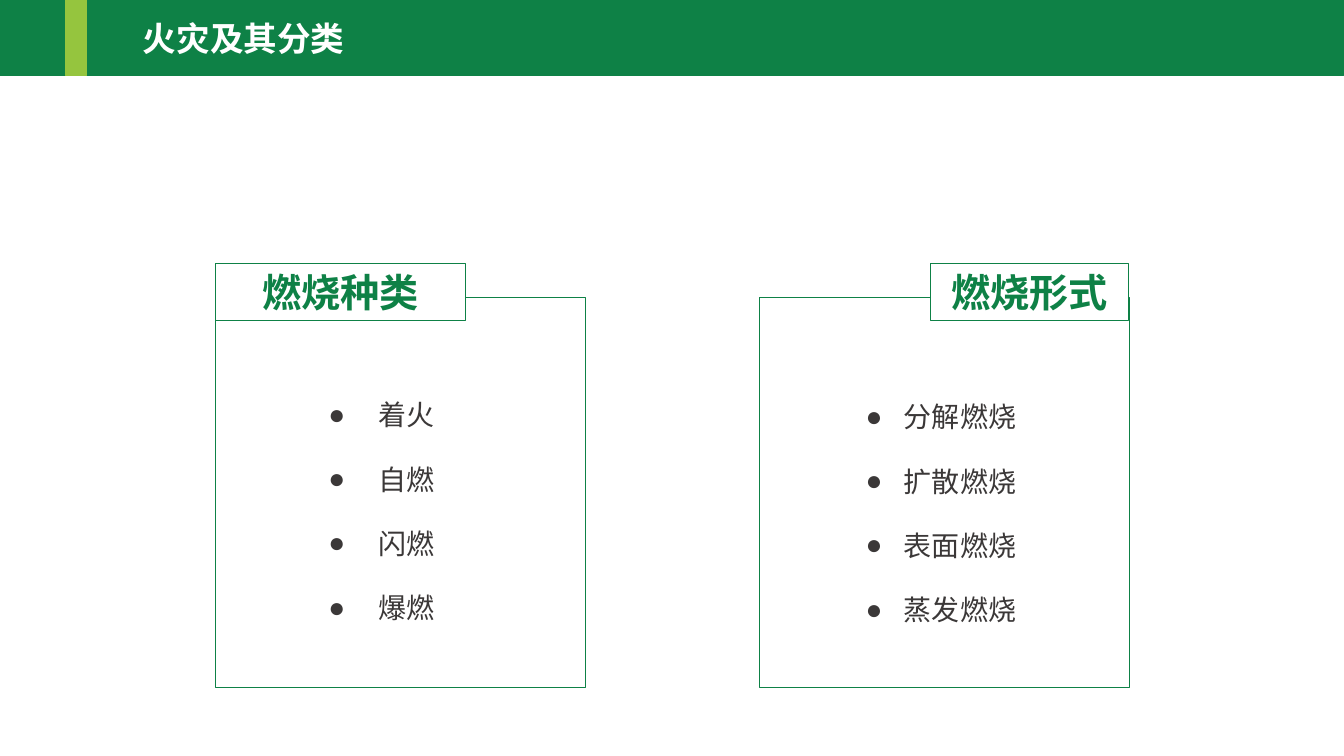
from lxml.etree import SubElement
from pptx import Presentation
from pptx.dml.color import RGBColor
from pptx.enum.shapes import MSO_SHAPE
from pptx.enum.text import MSO_ANCHOR, PP_ALIGN
from pptx.oxml.ns import qn
from pptx.util import Emu, Inches, Pt

TITLE = "火灾及其分类"
PANELS = [
    {"heading": "燃烧种类", "items": ["着火", "自燃", "闪燃", "爆燃"],
     "tag_width": 2.48, "tag_side": "left",
     "list_box": (3.16, 3.73, 1.66, 2.54), "indent": 0.5},
    {"heading": "燃烧形式", "items": ["分解燃烧", "扩散燃烧", "表面燃烧", "蒸发燃烧"],
     "tag_width": 1.97, "tag_side": "right",
     "list_box": (8.49, 3.75, 2.56, 3.19), "indent": 0.38},
]
COLORS = {"green": "0E8146", "lime": "95C53E", "white": "FFFFFF", "ink": "3B3838"}
FONT = "Noto Sans CJK SC"
SLIDE_W, SLIDE_H = 13.33, 7.5
BAR_H = SLIDE_H / 10
PANEL_LEFT, PANEL_TOP, PANEL_W, PANEL_H = 2.14, 2.95, 3.67, 3.87
PANEL_STEP = 5.39
TAG_TOP, TAG_H = 2.61, 0.57


def color(name):
    return RGBColor.from_string(COLORS[name])


def add_box(slide, box, line, weight, fill=None):
    rect = slide.shapes.add_shape(MSO_SHAPE.RECTANGLE, *map(Inches, box))
    rect.shadow.inherit = False
    if fill:
        rect.fill.solid()
        rect.fill.fore_color.rgb = color(fill)
    else:
        rect.fill.background()
    rect.line.color.rgb = color(line)
    rect.line.width = Pt(weight)
    return rect


def add_bullet(paragraph, indent):
    props = paragraph._p.get_or_add_pPr()
    props.set("marL", str(Inches(indent)))
    props.set("indent", str(-Inches(indent)))
    SubElement(props, qn("a:buFont")).set("typeface", "Arial")
    SubElement(props, qn("a:buChar")).set("char", "●")


def write(holder, lines, size, ink, bold=False, align=PP_ALIGN.LEFT,
          anchor=MSO_ANCHOR.TOP, indent=None):
    frame = holder.text_frame
    frame.word_wrap = True
    frame.vertical_anchor = anchor
    for index, line in enumerate(lines):
        paragraph = frame.paragraphs[0] if index == 0 else frame.add_paragraph()
        paragraph.alignment = align
        if indent:
            paragraph.line_spacing = 1.5
            paragraph.space_before = Pt(10)
            add_bullet(paragraph, indent)
        run = paragraph.add_run()
        run.text = line
        run.font.name = FONT
        run.font.size = Pt(size)
        run.font.bold = bold
        run.font.color.rgb = color(ink)
        SubElement(run.font._element, qn("a:ea")).set("typeface", FONT)


def add_text(slide, box, lines, **style):
    write(slide.shapes.add_textbox(*map(Inches, box)), lines, **style)


def add_panel(slide, column, panel):
    left = PANEL_LEFT + column * PANEL_STEP
    add_text(slide, panel["list_box"], panel["items"], size=20, ink="ink",
             indent=panel["indent"])
    add_box(slide, (left, PANEL_TOP, PANEL_W, PANEL_H), "green", 0.5)
    shift = PANEL_W - panel["tag_width"] if panel["tag_side"] == "right" else 0
    tag = add_box(slide, (left + shift, TAG_TOP, panel["tag_width"], TAG_H),
                  "green", 0.75, fill="white")
    write(tag, [panel["heading"]], size=28, ink="green", bold=True,
          align=PP_ALIGN.CENTER, anchor=MSO_ANCHOR.MIDDLE)


def main():
    deck = Presentation()
    deck.slide_width, deck.slide_height = Emu(12192000), Inches(SLIDE_H)
    slide = deck.slides.add_slide(deck.slide_layouts[6])
    add_box(slide, (0, 0, SLIDE_W, BAR_H), "green", 1, fill="green")
    add_box(slide, (0.65, -0.02, 0.21, BAR_H + 0.02), "lime", 1, fill="lime")
    add_text(slide, (1.32, 0.13, 3.35, 0.5), [TITLE], size=24, ink="white",
             bold=True, anchor=MSO_ANCHOR.MIDDLE)
    for column, panel in enumerate(PANELS):
        add_panel(slide, column, panel)
    deck.save("out.pptx")


if __name__ == "__main__":
    main()
